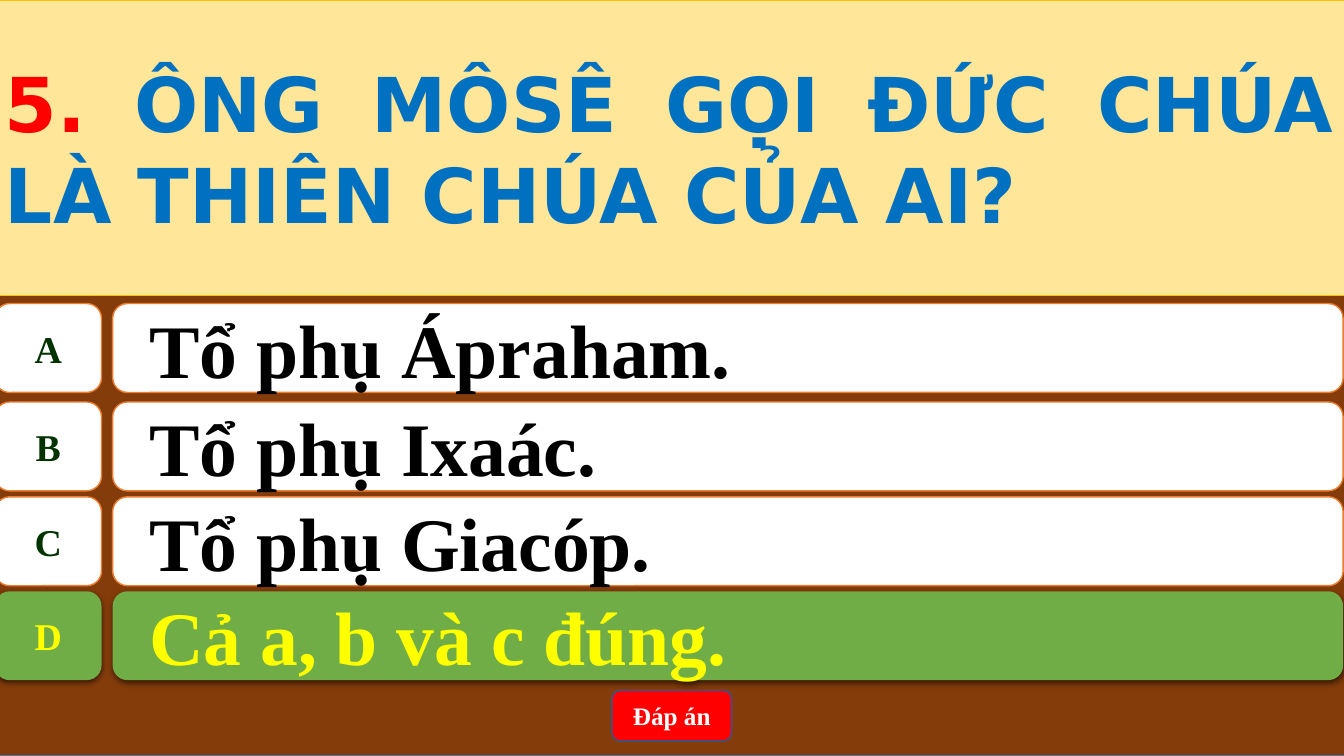
from dataclasses import dataclass
from lxml.etree import SubElement
from pptx import Presentation
from pptx.dml.color import RGBColor
from pptx.enum.shapes import MSO_SHAPE
from pptx.enum.text import MSO_ANCHOR, MSO_AUTO_SIZE, PP_ALIGN
from pptx.oxml.ns import qn
from pptx.util import Cm, Pt


@dataclass(frozen=True)
class Theme:
    board: str = "843C0B"
    board_edge: str = "43739E"
    question_fill: str = "FFE699"
    question_edge: str = "FFC000"
    question_number: str = "FF0000"
    question_text: str = "0070C0"
    answer_fill: str = "FFFFFF"
    answer_edge: str = "ED7D31"
    answer_text: str = "000000"
    letter_text: str = "003300"
    correct_fill: str = "70AD47"
    correct_text: str = "FFFF00"
    button_fill: str = "FF0000"
    button_edge: str = "325491"
    button_text: str = "FFFFFF"
    shadow: str = "000000"
    question_font: str = "DejaVu Sans"
    answer_font: str = "Times New Roman"
    large: int = 54
    letter: int = 27
    button: int = 18


THEME = Theme()
SLIDE_WIDTH, SLIDE_HEIGHT = 33.87, 19.05
LEFT, BOARD_WIDTH = -0.13, 34.01
QUESTION_HEIGHT = 7.44
LETTER_WIDTH, ANSWER_LEFT, ANSWER_WIDTH, ROW_HEIGHT = 2.69, 2.84, 31.01, 2.24
ANSWERS = [
    ("A", "Tổ phụ Ápraham.", 7.65, False),
    ("B", "Tổ phụ Ixaác.", 10.13, False),
    ("C", "Tổ phụ Giacóp.", 12.52, False),
    ("D", "Cả a, b và c đúng.", 14.9, True),
]


def apply_format(target, values):
    for name, value in values.items():
        setattr(target, name, value)


def place(element, left, top, width, height):
    apply_format(element, {"left": Cm(left), "top": Cm(top),
                           "width": Cm(width), "height": Cm(height)})


def paint(element, fill, edge=None, weight=1):
    element.fill.solid()
    element.fill.fore_color.rgb = RGBColor.from_string(fill)
    if edge is None:
        element.line.fill.background()
    else:
        element.line.color.rgb = RGBColor.from_string(edge)
        element.line.width = Pt(weight)


def add_panel(slide, preset, box, fill, edge=None):
    panel = slide.shapes.add_shape(preset, *(Cm(length) for length in box))
    panel.shadow.inherit = False
    paint(panel, fill, edge)
    return panel


def add_drop_shadow(panel):
    effects = panel._element.spPr.find(qn("a:effectLst"))
    drop = SubElement(effects, qn("a:outerShdw"), blurRad=str(Pt(4.5)),
                      dist=str(Pt(1.5)), dir="5400000", rotWithShape="0")
    tint = SubElement(drop, qn("a:srgbClr"), val=THEME.shadow)
    SubElement(tint, qn("a:alpha"), val="63000")


def write(element, pieces, font, size, align, wrap=True):
    frame = element.text_frame
    apply_format(frame, {"word_wrap": wrap, "auto_size": MSO_AUTO_SIZE.NONE,
                         "vertical_anchor": MSO_ANCHOR.MIDDLE})
    paragraph = frame.paragraphs[0]
    paragraph.alignment = align
    for wording, color in pieces:
        run = paragraph.add_run()
        run.text = wording
        apply_format(run.font, {"name": font, "size": Pt(size), "bold": True})
        run.font.color.rgb = RGBColor.from_string(color)
    return paragraph


def add_answer(slide, letter, wording, top, correct):
    fill = THEME.correct_fill if correct else THEME.answer_fill
    edge = None if correct else THEME.answer_edge
    letter_color = THEME.correct_text if correct else THEME.letter_text
    answer_color = THEME.correct_text if correct else THEME.answer_text

    letter_tile = add_panel(slide, MSO_SHAPE.FLOWCHART_ALTERNATE_PROCESS,
                            (LEFT, top, LETTER_WIDTH, ROW_HEIGHT), fill, edge)
    write(letter_tile, [(letter, letter_color)], THEME.answer_font,
          THEME.letter, PP_ALIGN.CENTER, wrap=False)
    answer_bar = add_panel(slide, MSO_SHAPE.ROUNDED_RECTANGLE,
                           (ANSWER_LEFT, top, ANSWER_WIDTH, ROW_HEIGHT), fill, edge)
    answer_line = write(answer_bar, [(wording, answer_color)], THEME.answer_font,
                        THEME.large, PP_ALIGN.LEFT)
    answer_line.level = 1
    indents = answer_line._p.get_or_add_pPr()
    indents.set("marL", str(Cm(1.27)))
    indents.set("indent", str(Cm(-0.71)))
    if correct:
        add_drop_shadow(letter_tile)
        add_drop_shadow(answer_bar)


def add_button(slide):
    button = add_panel(slide, MSO_SHAPE.ROUNDED_RECTANGLE, (15.42, 17.4, 3.02, 1.27),
                       THEME.button_fill, THEME.button_edge)
    write(button, [("Đáp án", THEME.button_text)], THEME.answer_font,
          THEME.button, PP_ALIGN.CENTER)


def set_question(slide):
    question = slide.shapes.title
    place(question, LEFT, 0, BOARD_WIDTH, QUESTION_HEIGHT)
    paint(question, THEME.question_fill, THEME.question_edge, 0.5)
    write(question, [("5. ", THEME.question_number),
                     ("ÔNG MÔSÊ GỌI ĐỨC CHÚA LÀ THIÊN CHÚA CỦA AI?", THEME.question_text)],
          THEME.question_font, THEME.large, PP_ALIGN.JUSTIFY)
    slide.shapes._spTree.append(question._element)


def main():
    deck = Presentation()
    apply_format(deck, {"slide_width": Cm(SLIDE_WIDTH), "slide_height": Cm(SLIDE_HEIGHT)})
    slide = deck.slides.add_slide(deck.slide_layouts[5])
    add_panel(slide, MSO_SHAPE.RECTANGLE, (LEFT, 0, BOARD_WIDTH, SLIDE_HEIGHT),
              THEME.board, THEME.board_edge)
    for answer in ANSWERS:
        add_answer(slide, *answer)
    add_button(slide)
    set_question(slide)
    deck.save("out.pptx")


if __name__ == "__main__":
    main()
